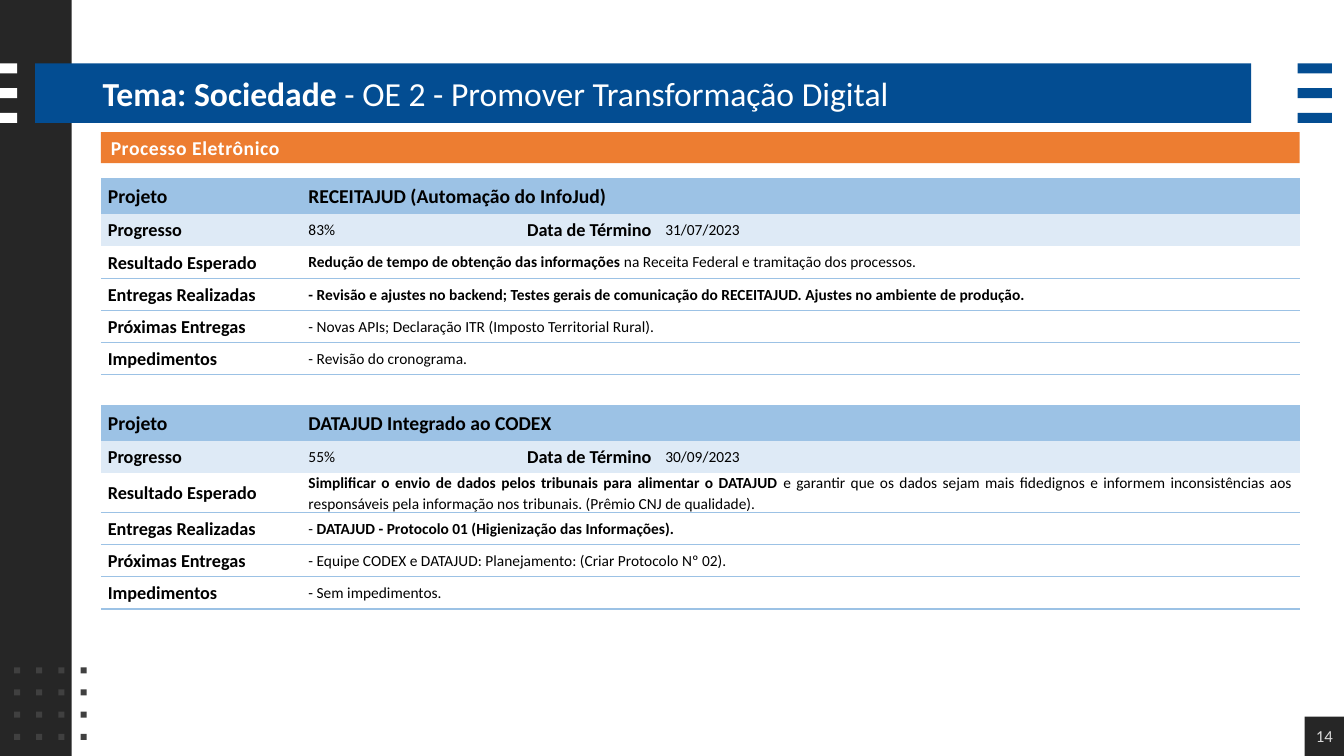
import pptx
import pptx.dml.color
import pptx.enum.shapes
import pptx.enum.text
import pptx.oxml
import pptx.oxml.ns
import pptx.util

Inches = pptx.util.Inches
Pt = pptx.util.Pt
RGBColor = pptx.dml.color.RGBColor
Align = pptx.enum.text.PP_ALIGN
Middle = pptx.enum.text.MSO_ANCHOR.MIDDLE

DARK = RGBColor(0x26, 0x26, 0x26)
GREY = RGBColor(0x40, 0x40, 0x40)
PALE = RGBColor(0xD9, 0xD9, 0xD9)
BLUE = RGBColor(0x03, 0x4D, 0x92)
ORANGE = RGBColor(0xED, 0x7D, 0x31)
SKY = RGBColor(0x9C, 0xC2, 0xE5)
ICE = RGBColor(0xDE, 0xEA, 0xF6)
WHITE = RGBColor(0xFF, 0xFF, 0xFF)
BLACK = RGBColor(0, 0, 0)

PLAIN_STYLE = "{2D5ABB26-0587-4C30-8999-92F81FD0307C}"
COLS = (1.99, 1.77, 1.77, 6.36)
ROWS = (0.35, 0.32, 0.32, 0.32, 0.32, 0.32)
LABELS = ("Resultado Esperado", "Entregas Realizadas",
          "Próximas Entregas", "Impedimentos")


class Deck:
    """Holds the style and the current slide."""
    font = "Calibri"

    def __init__(self):
        self.prs = pptx.Presentation()
        self.prs.slide_width = Inches(13.33)
        self.prs.slide_height = Inches(7.5)
        self.slide = self.prs.slides.add_slide(self.prs.slide_layouts[6])

    def rect(self, x, y, w, h, color):
        kind = pptx.enum.shapes.MSO_SHAPE.RECTANGLE
        box = self.slide.shapes.add_shape(
            kind, Inches(x), Inches(y), Inches(w), Inches(h))
        box.shadow.inherit = False
        box.fill.solid()
        box.fill.fore_color.rgb = color
        box.line.fill.background()
        return box

    def text(self, frame, runs, size, color=BLACK, align=Align.LEFT):
        """Fill the first paragraph with (words, bold) runs."""
        frame.word_wrap = True
        frame.vertical_anchor = Middle
        para = frame.paragraphs[0]
        para.alignment = align
        for words, bold in runs:
            run = para.add_run()
            run.text = words
            if len(runs) > 1:
                run.font.bold = bold
        font = para.font
        font.name, font.size, font.color.rgb = self.font, Pt(size), color
        if len(runs) == 1:
            font.bold = runs[0][1]
        return para

    def label(self, x, y, w, h, runs, size, color, align=Align.LEFT, pad=0.1):
        box = self.slide.shapes.add_textbox(
            Inches(x), Inches(y), Inches(w), Inches(h))
        frame = box.text_frame
        frame.margin_left = frame.margin_right = Inches(pad)
        frame.margin_top = frame.margin_bottom = Inches(pad / 2)
        self.text(frame, runs, size, color, align)

    def cell(self, cell, runs, size, align=Align.LEFT):
        cell.margin_left = cell.margin_right = Inches(0.07)
        cell.margin_top = cell.margin_bottom = 0
        para = self.text(cell.text_frame, runs, size, align=align)
        cell.vertical_anchor = Middle
        para.line_spacing = 1.07
        para.space_after = Pt(8)

    def border(self, cell, sides):
        props = cell._tc.get_or_add_tcPr()
        for spot, side in enumerate(sides):
            props.insert(spot, pptx.oxml.parse_xml(
                f'<a:ln{side} {pptx.oxml.ns.nsdecls("a")} w="12700">'
                f'<a:solidFill><a:srgbClr val="{SKY}"/></a:solidFill>'
                f'</a:ln{side}>'))

    def table(self, y, name, done, due, notes):
        shape = self.slide.shapes.add_table(
            len(ROWS), len(COLS), Inches(1), Inches(y),
            Inches(sum(COLS)), Inches(sum(ROWS)))
        grid = shape.table
        grid.first_row = grid.horz_banding = False
        style = grid._tbl.tblPr.find(pptx.oxml.ns.qn("a:tableStyleId"))
        style.text = PLAIN_STYLE
        for col, wide in zip(grid.columns, COLS):
            col.width = Inches(wide)

        # Row heights, fills, rules and merged cells
        for r, high in enumerate(ROWS):
            grid.rows[r].height = Inches(high)
            for c in range(len(COLS)):
                cell = grid.cell(r, c)
                if r < 2:
                    cell.fill.solid()
                    cell.fill.fore_color.rgb = (SKY, ICE)[r]
                else:
                    cell.fill.background()
                    self.border(cell, "B" if r == 2 else "TB")
            if r != 1:
                grid.cell(r, 1).merge(grid.cell(r, 3))

        # Project name and progress
        self.cell(grid.cell(0, 0), [("Projeto", True)], 14)
        self.cell(grid.cell(0, 1), [(name, True)], 14)
        self.cell(grid.cell(1, 0), [("Progresso", True)], 13)
        self.cell(grid.cell(1, 1), [(done, False)], 11)
        self.cell(grid.cell(1, 2), [("Data de Término", True)], 13,
                  Align.RIGHT)
        self.cell(grid.cell(1, 3), [(due, False)], 11)

        # Details
        for r, (head, runs) in enumerate(zip(LABELS, notes), 2):
            self.cell(grid.cell(r, 0), [(head, True)], 13)
            self.cell(grid.cell(r, 1), runs, 11, Align.JUSTIFY)


def main():
    deck = Deck()

    # Side band and title bar
    deck.rect(0, 0, 0.71, 7.5, DARK)
    deck.rect(0.35, 0.63, 12.06, 0.59, BLUE)

    # Stripes at both ends of the bar
    for x, wide, color in ((0, 0.17, WHITE), (12.87, 0.34, BLUE)):
        for i in range(3):
            deck.rect(x, 0.63 + 0.49 * i / 2, wide, 0.1, color)

    # Dot grid
    for row in range(4):
        for col in range(4):
            deck.rect(0.14 + 0.22 * col, 6.62 + 0.22 * row, 0.06, 0.06, GREY)

    # Page number
    deck.rect(12.94, 7.11, 0.39, 0.39, DARK)
    deck.label(12.94, 7.11, 0.39, 0.38, [("14", False)], 12, PALE,
               Align.CENTER, pad=0)

    # Section heading and title
    bar = deck.rect(1, 1.31, 11.89, 0.31, ORANGE)
    para = deck.text(bar.text_frame, [("Processo Eletrônico", True)], 14,
                     WHITE)
    para.runs[0].font._element.set("spc", "40")
    deck.label(0.92, 0.64, 11.5, 0.56,
               [("Tema: Sociedade ", True),
                ("- OE 2 - Promover Transformação Digital", False)],
               24, WHITE)

    # Projects
    deck.table(4.02, "DATAJUD Integrado ao CODEX", "55%", "30/09/2023", [
        [("Simplificar o envio de dados pelos tribunais para alimentar "
          "o DATAJUD ", True),
         ("e garantir que os dados sejam mais fidedignos e informem "
          "inconsistências aos responsáveis pela informação nos tribunais. "
          "(Prêmio CNJ de qualidade).", False)],
        [("- ", False),
         ("DATAJUD - Protocolo 01 (Higienização das Informações).", True)],
        [("- Equipe CODEX e DATAJUD: Planejamento: "
          "(Criar Protocolo Nº 02).", False)],
        [("- Sem impedimentos.", False)],
    ])
    deck.table(1.77, "RECEITAJUD (Automação do InfoJud)", "83%",
               "31/07/2023", [
        [("Redução de tempo de obtenção das informações ", True),
         ("na Receita Federal e tramitação dos processos.", False)],
        [("- Revisão e ajustes no backend; Testes gerais de comunicação do "
          "RECEITAJUD. Ajustes no ambiente de produção.", True)],
        [("- Novas APIs; Declaração ITR (Imposto Territorial Rural).",
          False)],
        [("- Revisão do cronograma.", False)],
    ])
    deck.prs.save("out.pptx")


if __name__ == "__main__":
    main()
